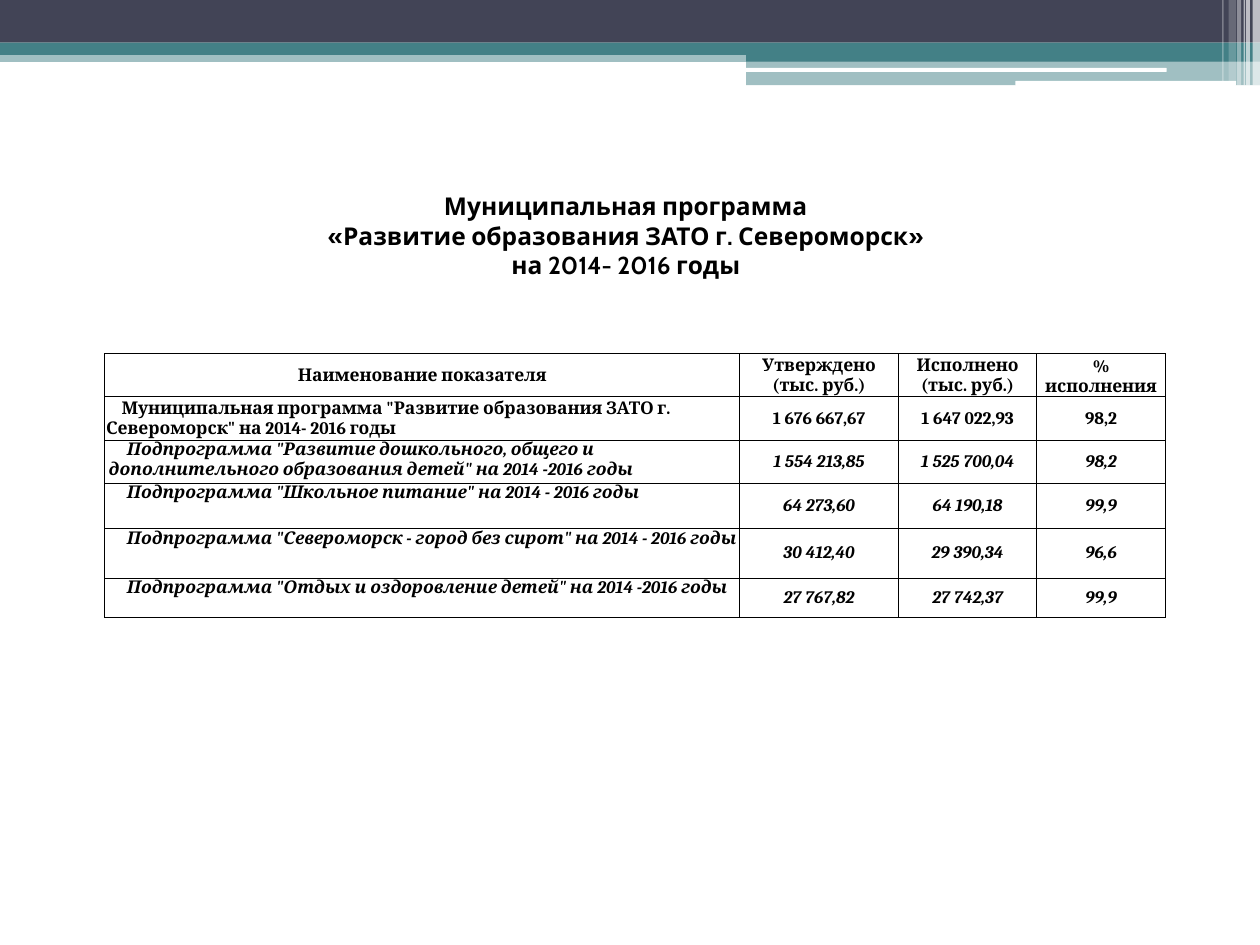
from pptx import Presentation
from pptx.dml.color import RGBColor
from pptx.enum.shapes import MSO_SHAPE
from pptx.enum.text import MSO_ANCHOR, MSO_AUTO_SIZE, PP_ALIGN
from pptx.oxml import parse_xml
from pptx.oxml.ns import nsdecls
from pptx.util import Cm, Pt

# Content
TITLE = [
    "Муниципальная программа",
    "«Развитие образования ЗАТО г. Североморск»",
    "на 2014- 2016 годы",
]
HEAD = ["Наименование показателя", "Утверждено (тыс. руб.)",
        "Исполнено (тыс. руб.)", "% исполнения"]
ROWS = [
    ['Муниципальная программа "Развитие образования ЗАТО г. Североморск" '
     'на 2014- 2016 годы', "1 676 667,67", "1 647 022,93", "98,2"],
    ['Подпрограмма "Развитие дошкольного, общего и\n'
     'дополнительного образования детей" на 2014 -2016 годы',
     "1 554 213,85", "1 525 700,04", "98,2"],
    ['Подпрограмма "Школьное питание" на 2014 - 2016 годы',
     "64 273,60", "64 190,18", "99,9"],
    ['Подпрограмма "Североморск - город без сирот" на 2014 - 2016 годы',
     "30 412,40", "29 390,34", "96,6"],
    ['Подпрограмма "Отдых и оздоровление детей" на 2014 -2016 годы',
     "27 767,82", "27 742,37", "99,9"],
]

THEME = {
    "navy": "424456", "teal": "438086", "white": "FFFFFF", "ink": "000000",
    "title font": "Cabin", "title size": 14,
    "cell font": "Cambria", "cell size": 10, "rule": 0.5,
}

# Layout in centimetres
WIDE, HIGH = 25.4, 19.05
SPLIT = 15.04
COLS = [12.8, 3.2, 2.79, 2.59]
TALL = [0.87, 0.87, 0.87, 0.91, 1, 0.79]

# Header bands: left, top, width, height, colour, opacity
BANDS = [
    (0, 1.02, WIDE, 0.23, "teal", 50),
    (0, 0, WIDE, 0.86, "navy", 100),
    (0, 0.86, WIDE, 0.25, "teal", 100),
    (SPLIT, 0.99, WIDE - SPLIT, 0.25, "teal", 100),
    (SPLIT, 1.22, WIDE - SPLIT, 0.5, "teal", 50),
]
# White rounded lines: left, top, width, height
LINES = [(15.01, 1.37, 8.51, 0.08), (20.47, 1.63, 4.45, 0.1)]
# White stripes: left, width, height, opacity
STRIPES = [
    (25.25, 0.15, 1.73, 65), (25.12, 0.08, 1.73, 65),
    (25.07, 0.03, 1.73, 60), (24.94, 0.08, 1.73, 40),
    (24.77, 0.15, 1.63, 20), (24.64, 0.03, 1.63, 30),
]


def shade(name):
    return RGBColor.from_string(THEME[name])


def add_bar(slide, box, name, alpha=100, kind=MSO_SHAPE.RECTANGLE):
    bar = slide.shapes.add_shape(kind, *map(Cm, box))
    bar.shadow.inherit = False
    bar.line.fill.background()
    bar.fill.solid()
    bar.fill.fore_color.rgb = shade(name)
    if alpha < 100:
        tone = bar.fill._xPr.solidFill[0]
        tone.append(parse_xml(
            f'<a:alpha {nsdecls("a")} val="{alpha * 1000}"/>'))


def style(para, part, align, slant=False):
    para.alignment = align
    for run in para.runs:
        font = run.font
        font.name = THEME[part + " font"]
        font.size = Pt(THEME[part + " size"])
        font.bold, font.italic = True, slant
        font.color.rgb = shade("ink")


def add_rules(cell):
    props = cell._tc.get_or_add_tcPr()
    for at, side in enumerate(("lnL", "lnR", "lnT", "lnB")):
        props.insert(at, parse_xml(
            f'<a:{side} {nsdecls("a")} w="{Pt(THEME["rule"])}"><a:solidFill>'
            f'<a:srgbClr val="{THEME["ink"]}"/></a:solidFill></a:{side}>'))


def fill_cell(cell, text, row, col):
    named = row > 0 and col == 0
    cell.fill.background()
    add_rules(cell)
    pad = Cm(0.03 if row < 2 else 0)
    cell.margin_left = cell.margin_right = cell.margin_top = pad
    cell.margin_bottom = 0
    cell.vertical_anchor = MSO_ANCHOR.TOP if named else MSO_ANCHOR.MIDDLE
    if row == 0 and col == len(HEAD) - 1:
        cell.vertical_anchor = MSO_ANCHOR.BOTTOM
    cell.text_frame.text = text
    for nth, para in enumerate(cell.text_frame.paragraphs):
        style(para, "cell", PP_ALIGN.LEFT if named else PP_ALIGN.CENTER,
              row > 1)
        if named:
            inset = 0.08 if nth else 0.31 if row == 1 else 0.45
            para._p.get_or_add_pPr().set("indent", str(Cm(inset)))


def add_title(slide):
    title = slide.shapes.title
    title.left, title.top = Cm(3.51), Cm(3.73)
    title.width, title.height = Cm(18.21), Cm(2.06)
    frame = title.text_frame
    frame.text = "\n".join(TITLE)
    frame.word_wrap = True
    frame.auto_size = MSO_AUTO_SIZE.NONE
    frame.vertical_anchor = MSO_ANCHOR.TOP
    for para in frame.paragraphs:
        style(para, "title", PP_ALIGN.CENTER)


def add_grid(slide):
    grid = slide.shapes.add_table(
        len(TALL), len(COLS), Cm(2.11), Cm(7.13),
        Cm(sum(COLS)), Cm(sum(TALL))).table
    grid.first_row = grid.horz_banding = False
    for col, width in zip(grid.columns, COLS):
        col.width = Cm(width)
    for row, height in zip(grid.rows, TALL):
        row.height = Cm(height)
    for r, texts in enumerate([HEAD] + ROWS):
        for c, text in enumerate(texts):
            fill_cell(grid.cell(r, c), text, r, c)


def main():
    deck = Presentation()
    deck.slide_width, deck.slide_height = Cm(WIDE), Cm(HIGH)
    slide = deck.slides.add_slide(deck.slide_layouts[5])

    # Header decoration
    for *box, name, alpha in BANDS:
        add_bar(slide, box, name, alpha)
    for box in LINES:
        add_bar(slide, box, "white", kind=MSO_SHAPE.ROUNDED_RECTANGLE)
    for left, width, height, alpha in STRIPES:
        add_bar(slide, (left, 0, width, height), "white", alpha)

    # Title and table
    add_title(slide)
    add_grid(slide)
    deck.save("out.pptx")


if __name__ == "__main__":
    main()
